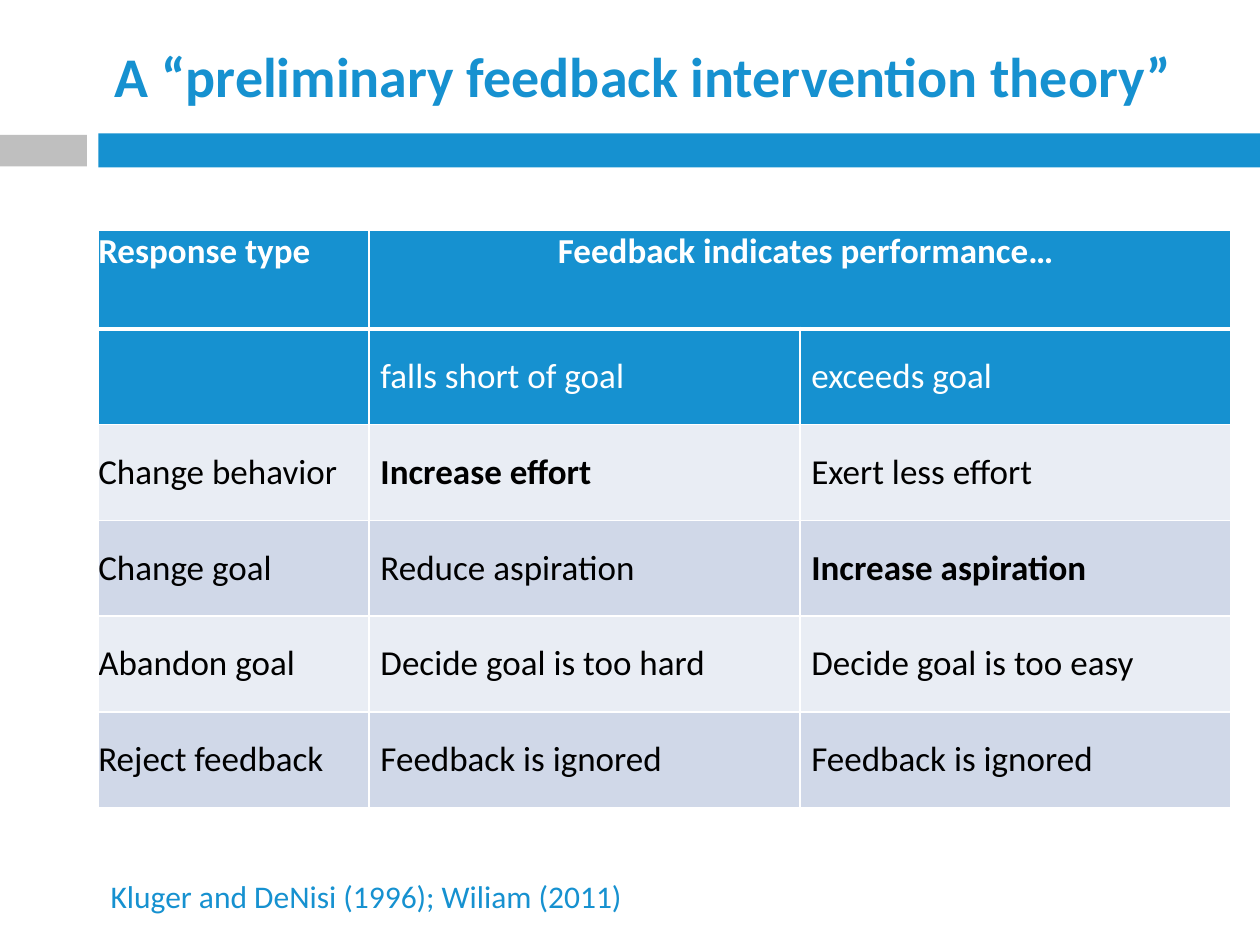
from lxml import etree
from pptx import Presentation
from pptx import util as u
from pptx.dml.color import RGBColor
from pptx.enum import shapes, text
from pptx.oxml import ns

BLUE = RGBColor(0x16, 0x91, 0xD0)
GREY = RGBColor(0xBF, 0xBF, 0xBF)
WHITE = RGBColor(0xFF, 0xFF, 0xFF)
BLACK = RGBColor(0, 0, 0)
BANDS = (RGBColor(0xE9, 0xED, 0xF4), RGBColor(0xD0, 0xD8, 0xE8))

RESPONSES = [
    ("Response type", "Feedback indicates performance…", ""),
    ("", "falls short of goal", "exceeds goal"),
    ("Change behavior", "Increase effort", "Exert less effort"),
    ("Change goal", "Reduce aspiration", "Increase aspiration"),
    ("Abandon goal", "Decide goal is too hard", "Decide goal is too easy"),
    ("Reject feedback", "Feedback is ignored", "Feedback is ignored"),
]
EMPHASIS = {"Increase effort", "Increase aspiration"}


class SlideBuilder:
    """Holds the style and the current slide, and adds each kind of element."""

    def __init__(self, slide, font_name="Calibri"):
        self.slide = slide
        self.font_name = font_name

    def style(self, paragraph, size, color, bold=False):
        font = paragraph.font
        font.name, font.size, font.bold = self.font_name, u.Pt(size), bold
        font.color.rgb = color

    def bar(self, left, top, width, height, color):
        shape = self.slide.shapes.add_shape(
            shapes.MSO_SHAPE.RECTANGLE, *map(u.Inches, (left, top, width, height)))
        shape.shadow.inherit = False
        shape.fill.solid()
        shape.fill.fore_color.rgb = color
        shape.line.fill.background()

    def label(self, words, left, top, width, height, size, bold=False,
              align=text.PP_ALIGN.LEFT, anchor=text.MSO_ANCHOR.TOP):
        box = self.slide.shapes.add_textbox(*map(u.Inches, (left, top, width, height)))
        frame = box.text_frame
        frame.word_wrap = True
        frame.vertical_anchor = anchor
        paragraph = frame.paragraphs[0]
        paragraph.text = words
        paragraph.alignment = align
        self.style(paragraph, size, BLUE, bold)

    def borders(self, cell, widths):
        properties = cell._tc.get_or_add_tcPr()
        for side, width in widths.items():
            line = etree.SubElement(properties, ns.qn(f"a:ln{side}"), w=str(u.Pt(width)))
            fill = etree.SubElement(line, ns.qn("a:solidFill"))
            etree.SubElement(fill, ns.qn("a:srgbClr"), val=str(WHITE))

    def cell(self, cell, words, row, column):
        self.borders(cell, {"L": 1, "R": 1, "T": 3 if row == 1 else 1,
                            "B": 3 if row == 0 else 1})
        cell.fill.solid()
        cell.fill.fore_color.rgb = BLUE if row < 2 else BANDS[row % 2]
        cell.margin_left = u.Inches(0.09 if column else 0)
        cell.margin_right = cell.margin_top = cell.margin_bottom = 0
        cell.vertical_anchor = text.MSO_ANCHOR.MIDDLE if row else text.MSO_ANCHOR.TOP
        paragraph = cell.text_frame.paragraphs[0]
        paragraph.text = words
        paragraph.space_after = u.Pt(4)
        if row == 0 and column:
            paragraph.alignment = text.PP_ALIGN.CENTER
        self.style(paragraph, 20, WHITE if row < 2 else BLACK,
                   row == 0 or words in EMPHASIS)

    def table(self, rows, left, top, widths, heights):
        table = self.slide.shapes.add_table(
            len(rows), len(widths),
            *map(u.Inches, (left, top, sum(widths), sum(heights)))).table
        for column, width in zip(table.columns, widths):
            column.width = u.Inches(width)
        for row, height in zip(table.rows, heights):
            row.height = u.Inches(height)
        table.cell(0, 1).merge(table.cell(0, 2))
        for row, entries in enumerate(rows):
            for column, words in enumerate(entries):
                self.cell(table.cell(row, column), words, row, column)


def main():
    presentation = Presentation()
    presentation.slide_width, presentation.slide_height = u.Inches(10), u.Inches(7.5)
    builder = SlideBuilder(presentation.slides.add_slide(presentation.slide_layouts[6]))
    builder.bar(0.78, 1.06, 9.22, 0.27, BLUE)
    builder.bar(0, 1.07, 0.69, 0.25, GREY)
    builder.label("A “preliminary feedback intervention theory”", 0.78, 0.26, 8.66, 0.68,
                  32, True, text.PP_ALIGN.CENTER, text.MSO_ANCHOR.MIDDLE)
    builder.table(RESPONSES, 0.78, 1.83, (2.15, 3.42, 3.42), (0.78,) + (0.76,) * 5)
    builder.label("Kluger and DeNisi (1996); Wiliam (2011)", 0.78, 6.91, 5.78, 0.4, 18)
    presentation.save("out.pptx")


if __name__ == "__main__":
    main()
